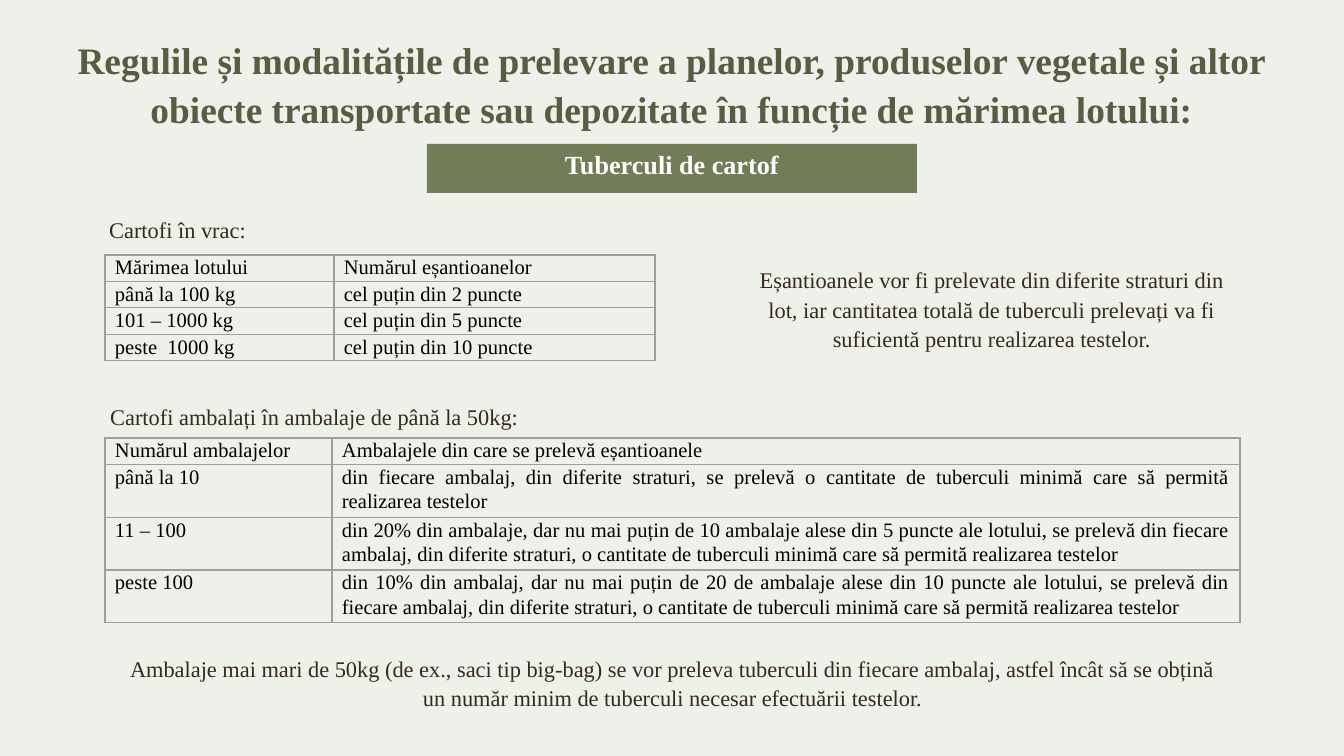
from lxml import etree
from pptx import Presentation
from pptx.dml.color import RGBColor
from pptx.enum.shapes import MSO_SHAPE
from pptx.enum.text import MSO_ANCHOR, PP_ALIGN
from pptx.oxml.ns import qn
from pptx.util import Emu, Pt

PX = 914400 / 134.4
FONT = "Times New Roman"
PALE = RGBColor(0xEE, 0xF0, 0xEA)
OLIVE = RGBColor(0x72, 0x7C, 0x57)
DARK = RGBColor(0x56, 0x5D, 0x41)
BROWN = RGBColor(0x36, 0x2A, 0x1B)
WHITE = RGBColor(255, 255, 255)
BLACK = RGBColor(0, 0, 0)
GREY = "9E9E9E"
LEFT, CENTER, JUSTIFY = PP_ALIGN.LEFT, PP_ALIGN.CENTER, PP_ALIGN.JUSTIFY
TOP, MIDDLE, BOTTOM = MSO_ANCHOR.TOP, MSO_ANCHOR.MIDDLE, MSO_ANCHOR.BOTTOM


def px(*nums):
    return [Emu(round(n * PX)) for n in nums]


def write(frame, text, size=12, color=BROWN, bold=False, align=CENTER,
          anchor=MIDDLE, space=1.09):
    frame.word_wrap = True
    frame.vertical_anchor = anchor
    para = frame.paragraphs[0]
    para.text = text
    para.alignment = align
    para.line_spacing = space
    font = para.runs[0].font
    font.name, font.size, font.bold = FONT, Pt(size), bold
    font.color.rgb = color


prs = Presentation()
prs.slide_width, prs.slide_height = px(1344, 756)
slide = prs.slides.add_slide(prs.slide_layouts[6])
slide.background.fill.solid()
slide.background.fill.fore_color.rgb = PALE
shapes = slide.shapes

# Title and banner
title = shapes.add_textbox(*px(26, 20, 1292, 109)).text_frame
title.margin_top = title.margin_bottom = px(13)[0]
write(title, "Regulile și modalitățile de prelevare a planelor, produselor vegetale "
      "și altor obiecte transportate sau depozitate în funcție de mărimea lotului:",
      size=20, color=DARK, bold=True, anchor=TOP)

band = shapes.add_shape(MSO_SHAPE.RECTANGLE, *px(427, 144, 490, 49))
band.shadow.inherit = False
band.fill.solid()
band.fill.fore_color.rgb = OLIVE
band.line.fill.background()
band.text_frame.margin_top = band.text_frame.margin_bottom = px(13)[0]
write(band.text_frame, "Tuberculi de cartof", size=14, color=WHITE, bold=True,
      anchor=BOTTOM, space=Pt(15))

# Headings and notes
notes = [
    ((96, 207, 606, 42), LEFT, "Cartofi în vrac:"),
    ((97, 394, 606, 42), LEFT, "Cartofi ambalați în ambalaje de până la 50kg:"),
    ((734, 249, 516, 118), CENTER,
     "Eșantioanele vor fi prelevate din diferite straturi din lot, iar cantitatea "
     "totală de tuberculi prelevați va fi suficientă pentru realizarea testelor."),
    ((106, 657, 1134, 50), CENTER,
     "Ambalaje mai mari de 50kg (de ex., saci tip big-bag) se vor preleva tuberculi "
     "din fiecare ambalaj, astfel încât să se obțină un număr minim de tuberculi "
     "necesar efectuării testelor."),
]
for place, align, text in notes:
    write(shapes.add_textbox(*px(*place)).text_frame, text, align=align)

# Tables: top, column widths, row heights, rows of text
bulk = [
    ("Mărimea lotului", "Numărul eșantioanelor"),
    ("până la 100 kg", "cel puțin din 2 puncte"),
    ("101 – 1000 kg", "cel puțin din 5 puncte"),
    ("peste  1000 kg", "cel puțin din 10 puncte"),
]
packed = [
    ("Numărul ambalajelor", "Ambalajele din care se prelevă eșantioanele"),
    ("până la 10",
     "din fiecare ambalaj, din diferite straturi, se prelevă o cantitate de "
     "tuberculi minimă care să permită realizarea testelor"),
    ("11 – 100",
     "din 20% din ambalaje, dar nu mai puțin de 10 ambalaje alese din 5 puncte ale "
     "lotului, se prelevă din fiecare ambalaj, din diferite straturi, o cantitate "
     "de tuberculi minimă care să permită realizarea testelor"),
    ("peste 100",
     "din 10% din ambalaj, dar nu mai puțin de 20 de ambalaje alese din 10 puncte "
     "ale lotului, se prelevă din fiecare ambalaj, din diferite straturi, o "
     "cantitate de tuberculi minimă care să permită realizarea testelor"),
]
for top, widths, heights, rows in [
    (255, (229, 321), (24, 24, 24, 24), bulk),
    (438, (227, 908), (24, 49, 49, 49), packed),
]:
    table = shapes.add_table(len(rows), 2, *px(105, top, sum(widths), sum(heights))).table
    table.first_row = table.horz_banding = False
    for col, width in zip(table.columns, px(*widths)):
        col.width = width
    for row, height, texts in zip(table.rows, px(*heights), rows):
        row.height = height
        for cell, text in zip(row.cells, texts):
            cell.margin_left = cell.margin_right = px(10)[0]
            cell.margin_top = cell.margin_bottom = 0
            write(cell.text_frame, text, size=11, color=BLACK, align=JUSTIFY,
                  anchor=TOP, space=1.07)
            props = cell._tc.get_or_add_tcPr()
            for side in ("lnL", "lnR", "lnT", "lnB"):
                line = etree.SubElement(props, qn("a:" + side), w=str(Pt(0.75)))
                fill = etree.SubElement(line, qn("a:solidFill"))
                etree.SubElement(fill, qn("a:srgbClr"), val=GREY)
            cell.fill.background()

prs.save("out.pptx")
